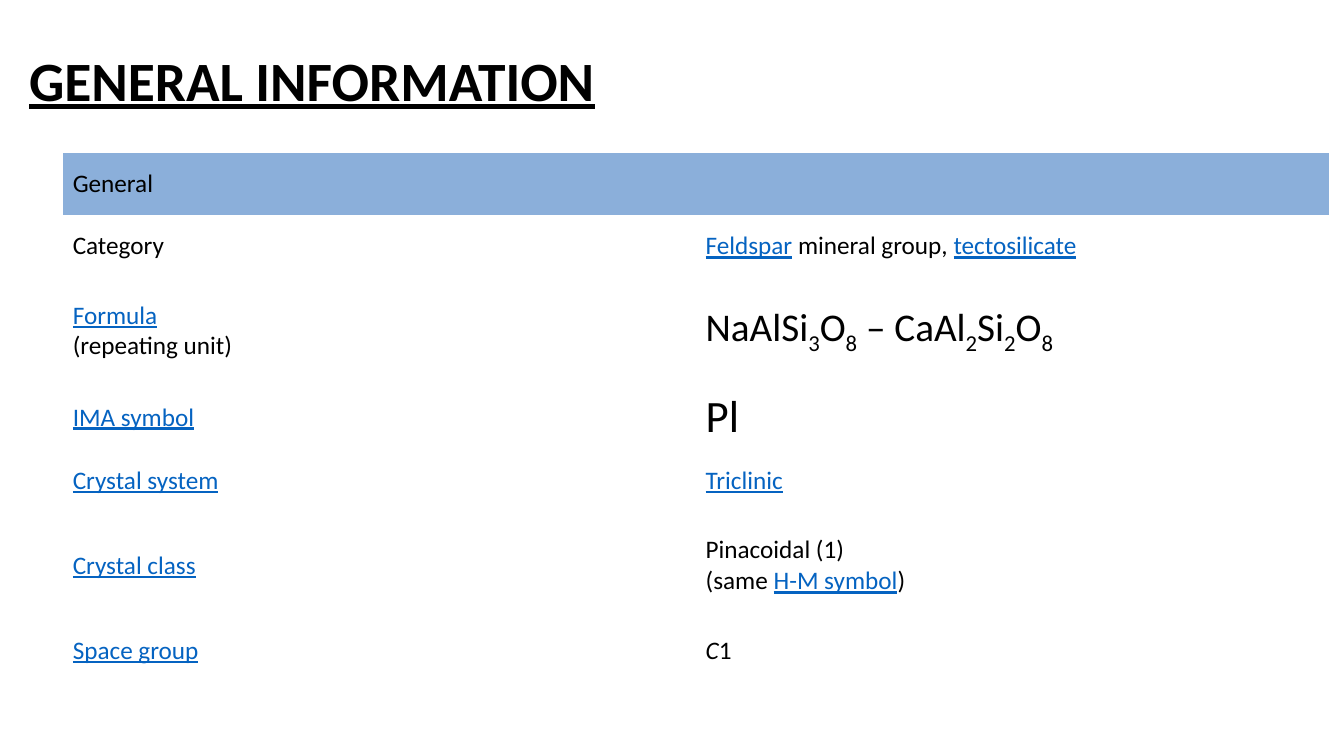
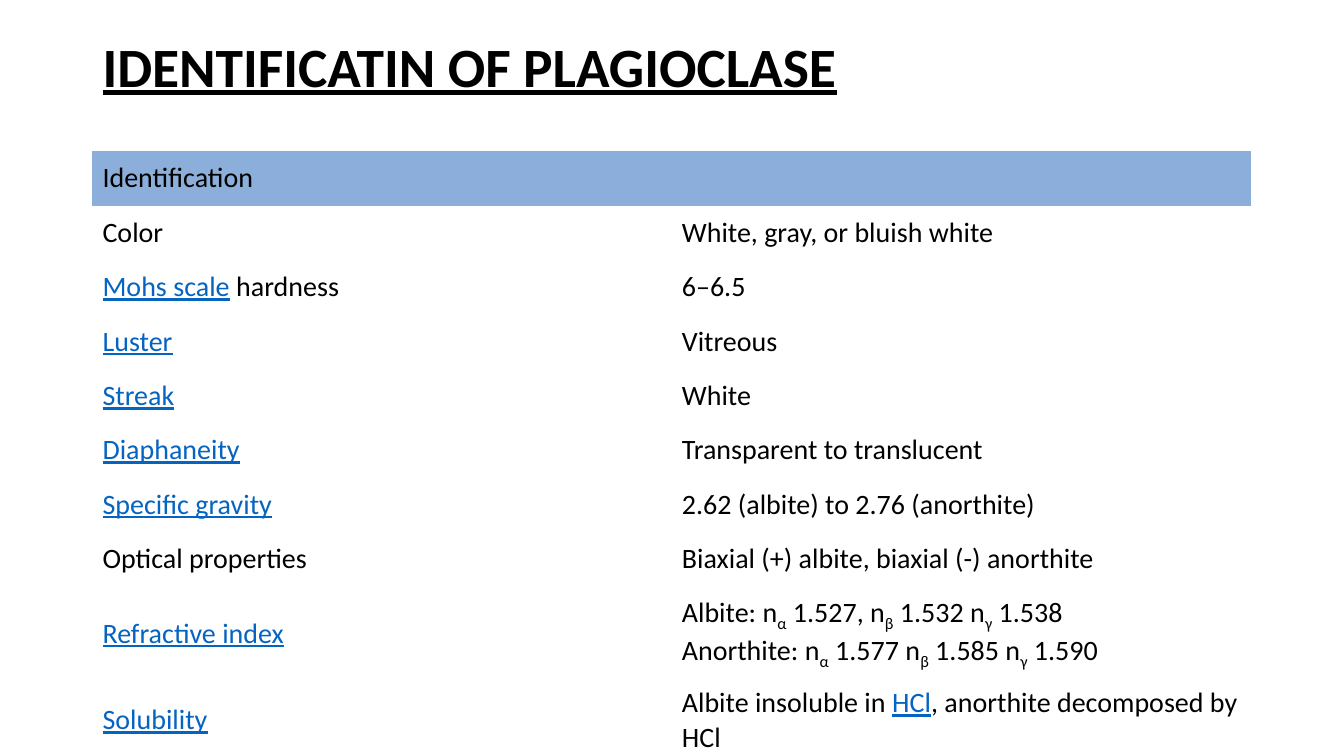
from pptx import Presentation
from pptx.dml.color import RGBColor
from pptx.enum.text import MSO_ANCHOR, MSO_AUTO_SIZE, PP_ALIGN
from pptx.oxml.ns import qn
from pptx.util import Cm, Pt

LEFT = PP_ALIGN.LEFT
MIDDLE = MSO_ANCHOR.MIDDLE
NO_FIT = MSO_AUTO_SIZE.NONE

COLORS = {"text": "000000", "link": "0563C1", "band": "8BAFDA"}
FONT = "Calibri"
TITLE_SIZE = 39.6
TITLE_ONLY = 5
PLAIN_GRID = "{2D5ABB26-0587-4C30-8999-92F81FD0307C}"

# Marked spans: |link|, _subscript_, *italic*; a cell uses one kind only.
MARKS = "|_*"

GENERAL = [
    ("Category", "|Feldspar| mineral group, |tectosilicate|"),
    ("|Formula|\n(repeating unit)", "NaAlSi_3_O_8_ – CaAl_2_Si_2_O_8_"),
    ("|IMA symbol|", "Pl"),
    ("|Crystal system|", "|Triclinic|"),
    ("|Crystal class|", "Pinacoidal (1)\n(same |H-M symbol|)"),
    ("|Space group|", "*C*1"),
]
BIG = {"Formula": 28, "IMA symbol": 32}

TRAITS = [
    ("Color", "White, gray, or bluish white"),
    ("|Mohs scale| hardness", "6–6.5"),
    ("|Luster|", "Vitreous"),
    ("|Streak|", "White"),
    ("|Diaphaneity|", "Transparent to translucent"),
    ("|Specific gravity|", "2.62 (albite) to 2.76 (anorthite)"),
    ("Optical properties", "Biaxial (+) albite, biaxial (-) anorthite"),
    ("|Refractive index|",
     "Albite: n_α_ 1.527, n_β_ 1.532 n_γ_ 1.538\n"
     "Anorthite: n_α_ 1.577 n_β_ 1.585 n_γ_ 1.590"),
    ("|Solubility|", "Albite insoluble in |HCl|, anorthite decomposed by HCl"),
]


def color(name):
    return RGBColor.from_string(COLORS[name])


def set_font(para, size):
    para.font.name = FONT
    para.font.size = Pt(size)
    para.font.color.rgb = color("text")


def add_title(slide, text, box):
    title = slide.shapes.title
    title.left, title.top, title.width, title.height = map(Cm, box)
    frame = title.text_frame
    frame.text = text
    frame.auto_size = NO_FIT
    frame.vertical_anchor = MIDDLE
    para = frame.paragraphs[0]
    para.alignment = LEFT
    para.line_spacing = 0.9
    set_font(para, TITLE_SIZE)
    para.font.bold = para.font.underline = True


def style_span(run, mark):
    if mark == "|":
        run.font.color.rgb = color("link")
        run.font.underline = True
    elif mark == "*":
        run.font.italic = True
    else:
        run.font._element.set("baseline", "-25000")


def fill_cell(cell, text, size):
    """Write marked text, turning every second span into its mark's style."""
    cell.vertical_anchor = MIDDLE
    cell.fill.background()
    para = cell.text_frame.paragraphs[0]
    set_font(para, size)
    mark = next((m for m in MARKS if m in text), MARKS[0])
    for row, line in enumerate(text.split("\n")):
        if row:
            para.add_line_break()
        for pos, span in enumerate(line.split(mark)):
            if span:
                run = para.add_run()
                run.text = span
                if pos % 2:
                    style_span(run, mark)


def add_facts(slide, head, facts, box, low, tall, size):
    """Place a two-column table; rows with two lines get the tall height."""
    left, top, width = map(Cm, box)
    frame = slide.shapes.add_table(len(facts) + 1, 2, left, top, width, Cm(low))
    table = frame.table
    table.first_row = table.horz_banding = False
    table._tbl.tblPr.find(qn("a:tableStyleId")).text = PLAIN_GRID
    table.rows[0].height = Cm(low)
    band = table.cell(0, 0)
    band.merge(table.cell(0, 1))
    fill_cell(band, head, size)
    band.fill.solid()
    band.fill.fore_color.rgb = color("band")
    for row, (label, value) in enumerate(facts, 1):
        table.rows[row].height = Cm(tall if "\n" in label + value else low)
        fill_cell(table.cell(row, 0), label, size)
        key = label.split("\n")[0].strip("|")
        fill_cell(table.cell(row, 1), value, BIG.get(key, size))


def main():
    deck = Presentation()
    deck.slide_width, deck.slide_height = Cm(33.87), Cm(19.05)
    layout = deck.slide_layouts[TITLE_ONLY]

    slide = deck.slides.add_slide(layout)
    add_title(slide, "GENERAL INFORMATION", (0.48, 1.35, 29.2, 1.5))
    add_facts(slide, "General", GENERAL, (1.58, 3.86, 31.9), 1.56, 2.72, 18)

    slide = deck.slides.add_slide(layout)
    add_title(slide, "IDENTIFICATIN OF PLAGIOCLASE", (2.33, 1.02, 29.2, 1.45))
    add_facts(slide, "Identification", TRAITS, (2.33, 3.81, 29.2), 1.37, 2.39, 20)

    deck.save("out.pptx")


if __name__ == "__main__":
    main()
